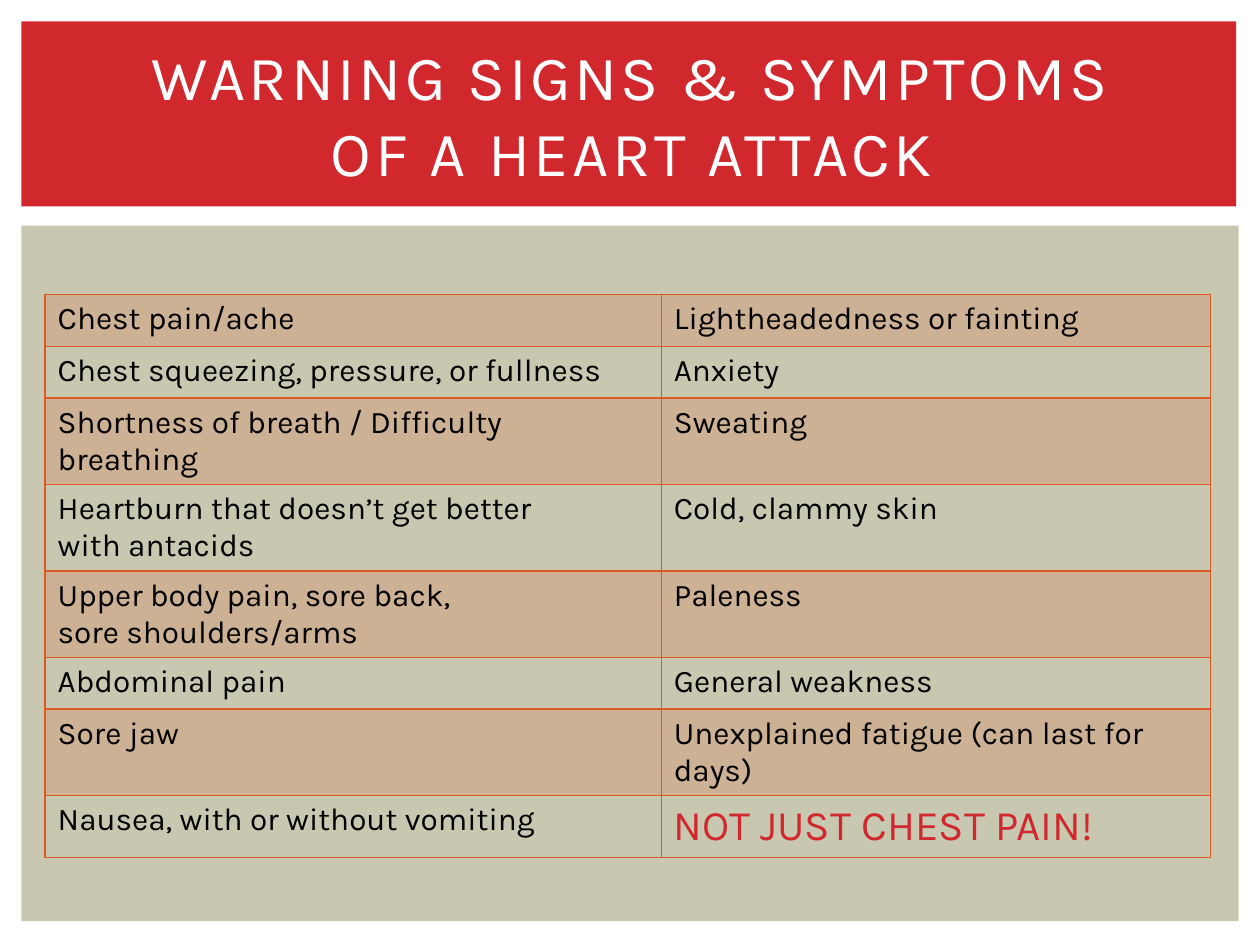
from typing import NamedTuple

from lxml import etree
from pptx import Presentation
from pptx.dml.color import RGBColor
from pptx.enum.shapes import MSO_SHAPE
from pptx.enum.text import MSO_ANCHOR, PP_ALIGN
from pptx.oxml.ns import qn
from pptx.util import Cm, Pt

RECT = MSO_SHAPE.RECTANGLE
MIDDLE = MSO_ANCHOR.MIDDLE
CENTER = PP_ALIGN.CENTER

RED = RGBColor(0xD1, 0x28, 0x2E)
SAGE = RGBColor(0xC8, 0xC8, 0xB1)
ORANGE = RGBColor(0xDC, 0x59, 0x24)
BLACK = RGBColor(0, 0, 0)
WHITE = RGBColor(0xFF, 0xFF, 0xFF)
FONT = "Karla"


class Panel(NamedTuple):
    left: float
    top: float
    width: float
    height: float
    color: RGBColor


class Sign(NamedTuple):
    text: str
    size: int = 18
    color: RGBColor = BLACK


PANELS = [
    Panel(0.43, 4.55, 24.54, 14.02, SAGE),
    Panel(0.43, 0.43, 24.49, 3.73, RED),
]
SIGNS = [
    (Sign("Chest pain/ache"), Sign("Lightheadedness or fainting")),
    (Sign("Chest squeezing, pressure, or fullness"), Sign("Anxiety")),
    (Sign("Shortness of breath / Difficulty breathing"), Sign("Sweating")),
    (Sign("Heartburn that doesn’t get better\nwith antacids"), Sign("Cold, clammy skin")),
    (Sign("Upper body pain, sore back,\nsore shoulders/arms"), Sign("Paleness")),
    (Sign("Abdominal pain"), Sign("General weakness")),
    (Sign("Sore jaw"), Sign("Unexplained fatigue (can last for days)")),
    (Sign("Nausea, with or without vomiting"), Sign("NOT JUST CHEST PAIN!", 24, RED)),
]
COLS = (12.42, 11.07)
ROW = 1.04


def style(para, size: int, color: RGBColor) -> None:
    for run in para.runs:
        run.font.name = FONT
        run.font.size = Pt(size)
        run.font.color.rgb = color


def draw_panel(slide, panel: Panel) -> None:
    box = slide.shapes.add_shape(RECT, *map(Cm, panel[:4]))
    box.shadow.inherit = False
    box.fill.solid()
    box.fill.fore_color.rgb = panel.color
    box.line.fill.background()


def draw_title(slide, text: str) -> None:
    title = slide.shapes.title
    title.left, title.top = Cm(1.07), Cm(1.04)
    title.width, title.height = Cm(23.34), Cm(3.81)
    # Bring the title in front of the panels
    title.element.getparent().append(title.element)
    frame = title.text_frame
    frame.word_wrap = True
    frame.vertical_anchor = MIDDLE
    frame.margin_bottom = Cm(1.45)
    para = frame.paragraphs[0]
    para.text = text
    para.alignment = CENTER
    style(para, 36, WHITE)
    for run in para.runs:
        run.font._element.set("spc", "200")


def draw_edges(cell) -> None:
    props = cell._tc.get_or_add_tcPr()
    for side in ("lnL", "lnR", "lnT", "lnB"):
        line = etree.SubElement(props, qn(f"a:{side}"), w=str(Pt(1)))
        fill = etree.SubElement(line, qn("a:solidFill"))
        etree.SubElement(fill, qn("a:srgbClr"), val=str(ORANGE))


def draw_cell(cell, sign: Sign, tinted: bool) -> None:
    para = cell.text_frame.paragraphs[0]
    para.text = sign.text
    style(para, sign.size, sign.color)
    draw_edges(cell)
    if tinted:
        cell.fill.solid()
        cell.fill.fore_color.rgb = ORANGE
        tint = cell._tc.tcPr.find(f"{qn('a:solidFill')}/{qn('a:srgbClr')}")
        etree.SubElement(tint, qn("a:alpha"), val="20000")
    else:
        cell.fill.background()


def draw_table(slide) -> None:
    table = slide.shapes.add_table(
        len(SIGNS), len(COLS), Cm(0.91), Cm(5.94), Cm(sum(COLS)), Cm(ROW * len(SIGNS))
    ).table
    table.first_row = table.horz_banding = False
    for col, width in zip(table.columns, COLS):
        col.width = Cm(width)
    for i, pair in enumerate(SIGNS):
        table.rows[i].height = Cm(ROW)
        for j, sign in enumerate(pair):
            draw_cell(table.cell(i, j), sign, i % 2 == 0)


def main() -> None:
    deck = Presentation()
    deck.slide_width, deck.slide_height = Cm(25.4), Cm(19.05)
    slide = deck.slides.add_slide(deck.slide_layouts[5])

    # Background panels
    for panel in PANELS:
        draw_panel(slide, panel)

    # Symptoms, then the heading over the red panel
    draw_table(slide)
    draw_title(slide, "WARNING SIGNS & SYMPTOMS\nOF A HEART ATTACK")
    deck.save("out.pptx")


if __name__ == "__main__":
    main()
